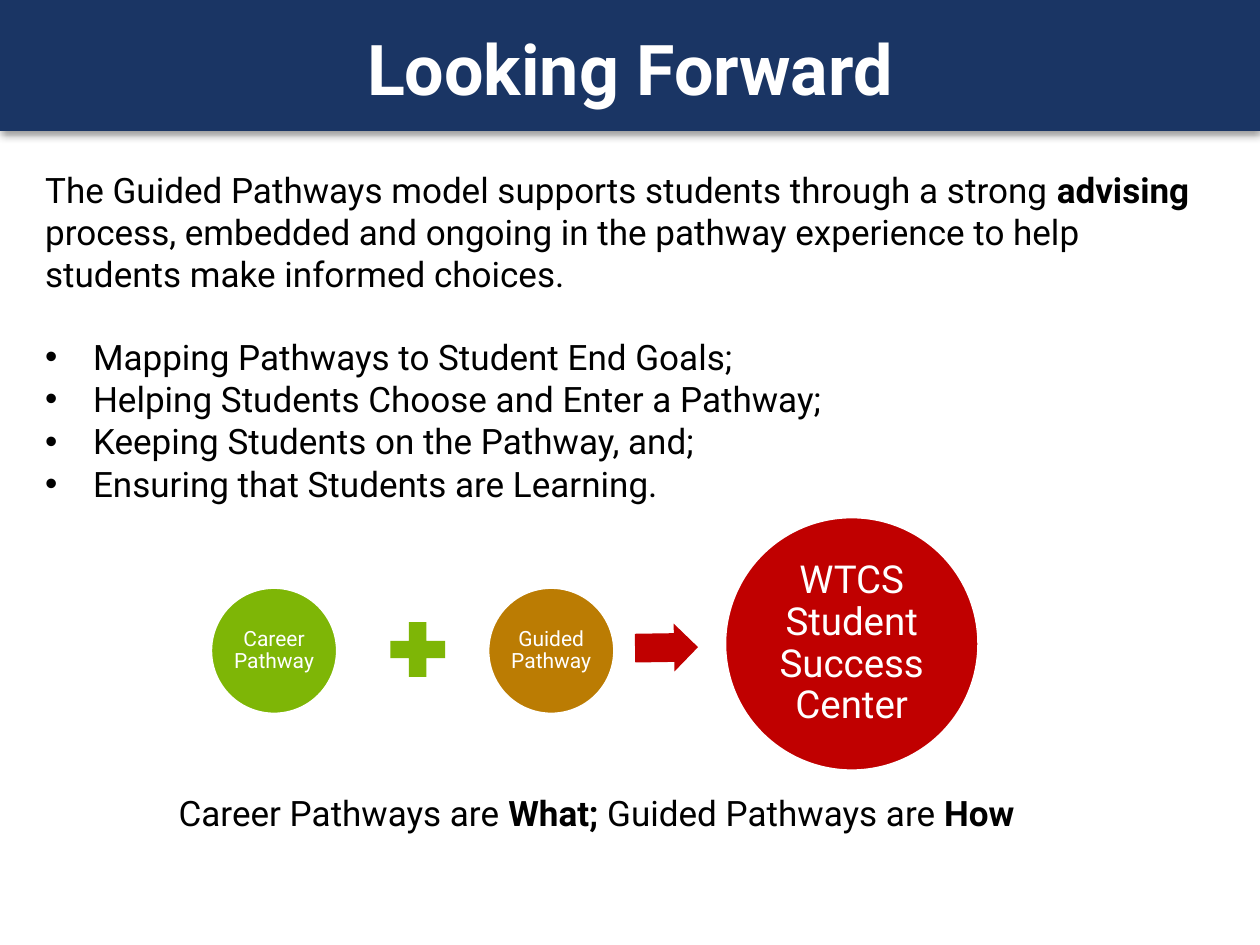
from lxml.etree import SubElement
from pptx import Presentation
from pptx.dml.color import RGBColor
from pptx.enum.shapes import MSO_SHAPE as Shape
from pptx.enum.text import MSO_ANCHOR as Anchor, PP_ALIGN as Align
from pptx.oxml.ns import qn
from pptx.util import Inches, Pt

COLUMNS, ROWS = 100, 75
CELL = Inches(0.1)
FONT = "Roboto"
NAVY = RGBColor(0x1A, 0x35, 0x64)
GREEN = RGBColor(0x7E, 0xB6, 0x06)
OCHRE = RGBColor(0xBB, 0x7C, 0x03)
RED = RGBColor(0xC0, 0x00, 0x00)
WHITE = RGBColor(0xFF, 0xFF, 0xFF)
BLACK = RGBColor(0x00, 0x00, 0x00)

INTRO = [
    ("The Guided Pathways model supports students through a strong ", False),
    ("advising ", True),
    ("process, embedded and ongoing in the pathway experience "
     "to help students make informed choices.", False),
]
GOALS = [
    "Mapping Pathways to Student End Goals;",
    "Helping Students Choose and Enter a Pathway;",
    "Keeping Students on the Pathway, and;",
    "Ensuring that Students are Learning.",
]
SUMMARY = [
    ("Career Pathways are", False),
    (" What; ", True),
    ("Guided Pathways are ", False),
    ("How", True),
]


def cells(box):
    return [round(value * CELL) for value in box]


def write(para, spans, size, color):
    for text, bold in spans:
        span = para.add_run()
        span.text = text
        span.font.name = FONT
        span.font.size = Pt(size)
        span.font.bold = bold
        span.font.color.rgb = color


def add_text(page, box):
    frame = page.shapes.add_textbox(*cells(box)).text_frame
    frame.word_wrap = True
    return frame


def add_filled(page, kind, box, color):
    shape = page.shapes.add_shape(kind, *cells(box))
    shape.shadow.inherit = False
    shape.fill.solid()
    shape.fill.fore_color.rgb = color
    shape.line.fill.background()
    return shape


def add_header(page, box):
    left, top, width, height = box
    band = add_filled(page, Shape.RECTANGLE, box, NAVY)
    effects = band._element.spPr.find(qn("a:effectLst"))
    shadow = SubElement(effects, qn("a:outerShdw"), blurRad=str(Pt(5)),
                        dist=str(Pt(2)), dir="5400000", rotWithShape="0")
    tint = SubElement(shadow, qn("a:srgbClr"), val="000000")
    SubElement(tint, qn("a:alpha"), val="40000")

    frame = add_text(page, (left + 6, top + 1.5, width - 12, 8))
    frame.vertical_anchor = Anchor.BOTTOM
    para = frame.paragraphs[0]
    para.alignment = Align.CENTER
    write(para, [("Looking Forward", True)], 40, WHITE)


def add_goals(page, box):
    frame = add_text(page, box)
    write(frame.paragraphs[0], INTRO, 20, BLACK)
    for index, goal in enumerate(GOALS):
        para = frame.add_paragraph()
        props = para._p.get_or_add_pPr()
        props.set("marL", str(Inches(0.38)))
        props.set("indent", str(-Inches(0.38)))
        SubElement(props, qn("a:buFont"), typeface="Arial")
        SubElement(props, qn("a:buChar"), char="•")
        if index == 0:
            para.space_before = Pt(23.5)
        write(para, [(goal, False)], 20, BLACK)


def add_circle(page, box, color, label, size, inset):
    circle = add_filled(page, Shape.OVAL, box, color)
    circle.line.color.rgb = WHITE
    circle.line.width = Pt(2)
    frame = circle.text_frame
    frame.word_wrap = True
    frame.vertical_anchor = Anchor.MIDDLE
    frame.margin_left = frame.margin_right = Inches(inset)
    frame.margin_top = frame.margin_bottom = Inches(inset)
    para = frame.paragraphs[0]
    para.alignment = Align.CENTER
    para.line_spacing = 0.9
    write(para, [(label, False)], size, WHITE)


def add_equation(page, box):
    left, top, width, height = box
    small = height / 2
    row = top + 5.6
    add_circle(page, (left, row, small, small), GREEN,
               "Career Pathway", 12, 0.02)
    add_filled(page, Shape.MATH_PLUS, (left + 13.5, row + 2, 5.9, 5.9), GREEN)
    add_circle(page, (left + 22, row, small, small), OCHRE,
               "Guided Pathway", 12, 0.02)
    arrow = add_filled(page, Shape.RIGHT_ARROW,
                       (left + 33.7, row + 2.9, 5, 3.8), RED)
    arrow.adjustments[0] = 0.6
    arrow.adjustments[1] = 0.5
    arrow.rotation = 359.1
    add_circle(page, (left + width - height, top, height, height), RED,
               "WTCS Student Success Center", 22, 0.03)


def add_summary(page, box):
    write(add_text(page, box).paragraphs[0], SUMMARY, 20, BLACK)


def main():
    deck = Presentation()
    deck.slide_width = COLUMNS * CELL
    deck.slide_height = ROWS * CELL
    page = deck.slides.add_slide(deck.slide_layouts[6])
    add_header(page, (0, -0.3, COLUMNS, 10.7))
    add_equation(page, (16.7, 41, 61, 20.2))
    add_goals(page, (2.6, 12.9, 94.8, 27.9))
    add_summary(page, (13.2, 62.3, 73.7, 4.4))
    deck.save("out.pptx")


if __name__ == "__main__":
    main()
